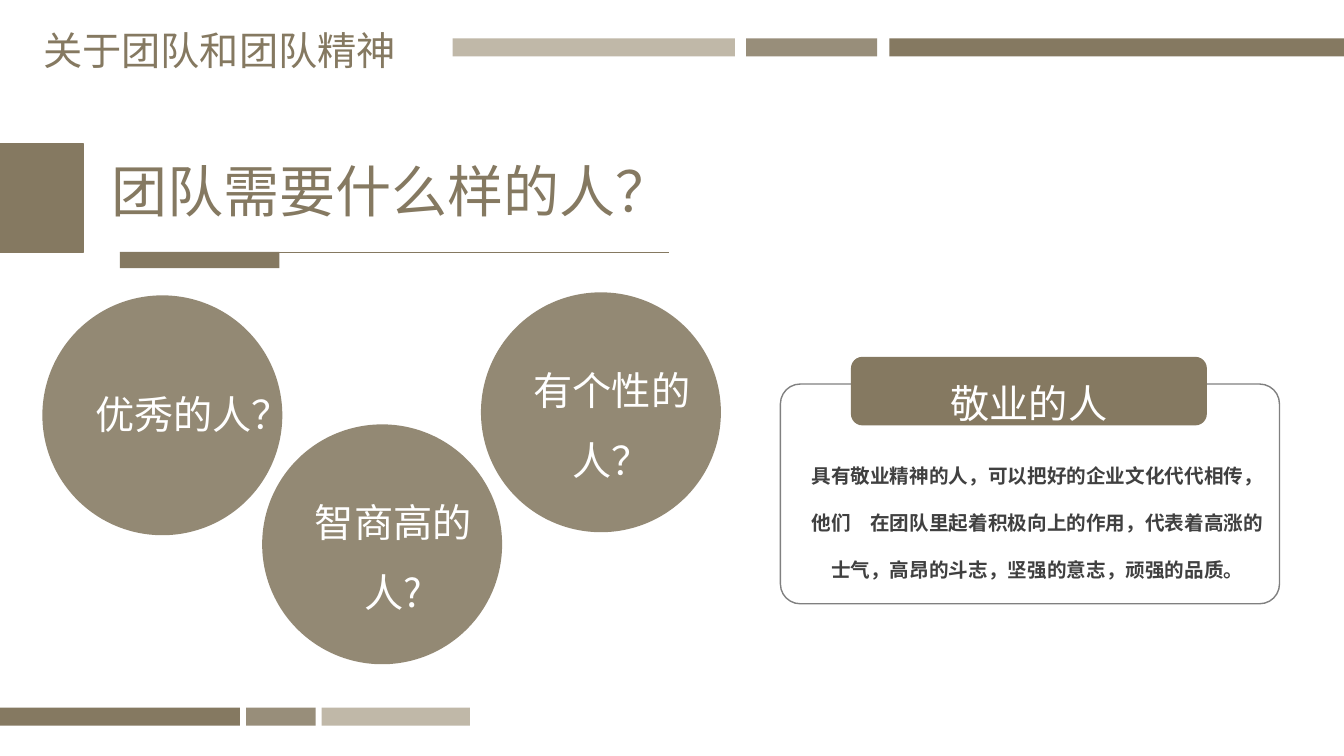
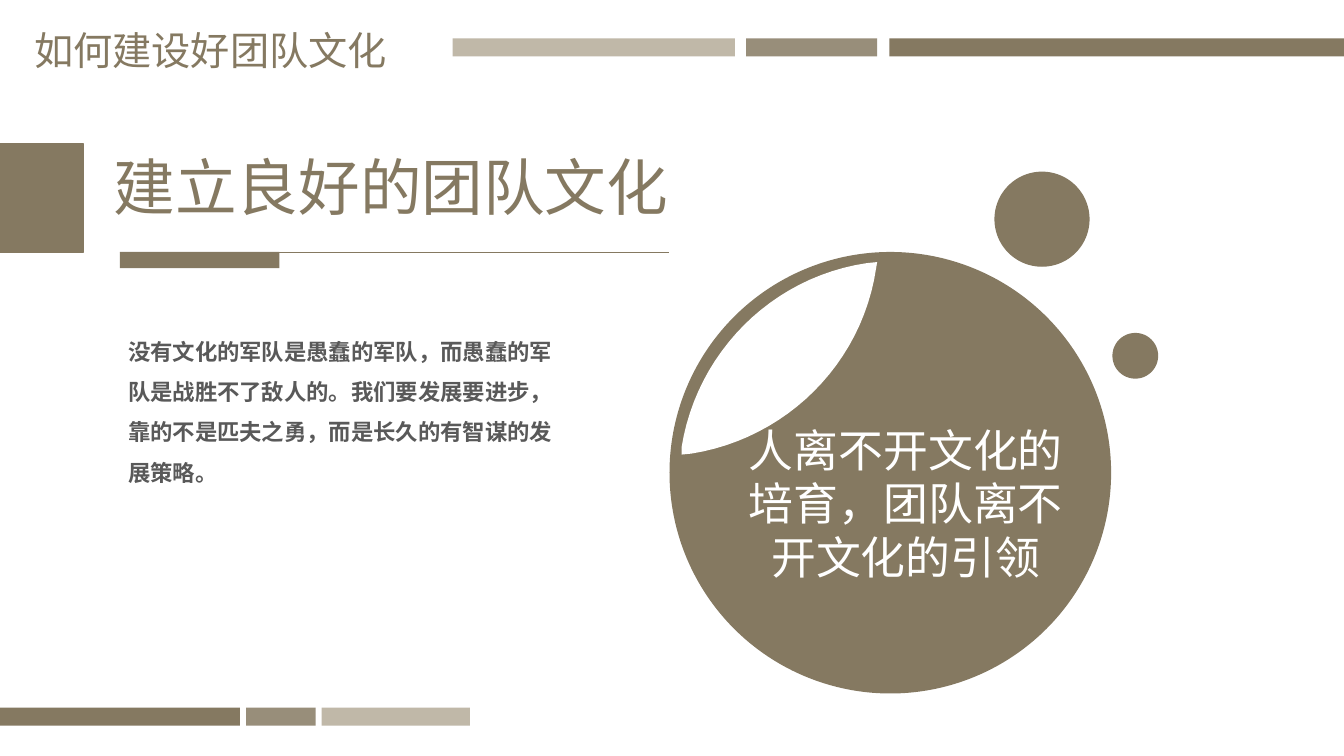
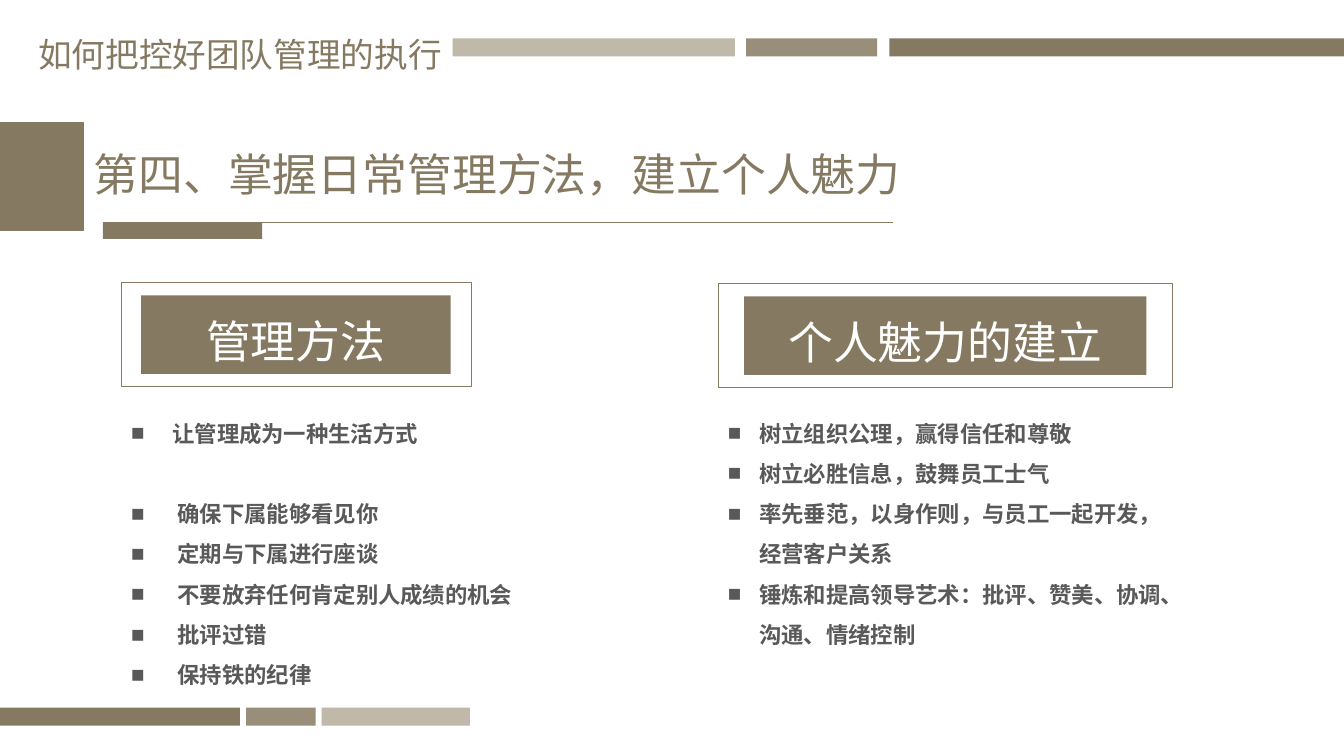
from dataclasses import dataclass

from lxml.etree import SubElement
from pptx import Presentation
from pptx.dml.color import RGBColor
from pptx.enum.shapes import MSO_CONNECTOR, MSO_SHAPE
from pptx.enum.text import MSO_ANCHOR, MSO_AUTO_SIZE, PP_ALIGN
from pptx.oxml.ns import qn
from pptx.util import Inches, Pt


@dataclass(frozen=True)
class Theme:
    """Colours, font and type sizes of the presentation."""

    font: str = "Noto Sans CJK SC"
    brown: str = "857961"
    sand: str = "C0B8A8"
    white: str = "FFFFFF"
    grey: str = "808080"
    dark: str = "404040"
    body: str = "595959"
    title_size: int = 28
    long_title_size: int = 24
    bubble_size: int = 28
    large_size: int = 32
    heading_size: int = 40
    big_heading_size: int = 44
    card_size: int = 14
    body_size: int = 16


THEME = Theme()


def to_lengths(box):
    """Return the numbers of a box as lengths."""
    return [Inches(value) for value in box]


def set_values(target, values):
    """Set each attribute of the target from a dict."""
    for name, value in values.items():
        setattr(target, name, value)


def write_text(frame, texts, size, color, bold=False, align=PP_ALIGN.LEFT,
               spacing=1.0, indents=None, gap_after_first=0, anchor=MSO_ANCHOR.TOP):
    """Write one formatted paragraph per text; indents turn on square bullets."""
    set_values(frame, {"word_wrap": True, "auto_size": MSO_AUTO_SIZE.NONE,
                       "vertical_anchor": anchor})
    for index, text in enumerate(texts):
        paragraph = frame.add_paragraph() if index else frame.paragraphs[0]
        set_values(paragraph, {"alignment": align, "line_spacing": spacing,
                               "space_before": Pt(0),
                               "space_after": Pt(0 if index else gap_after_first)})
        properties = paragraph._p.get_or_add_pPr()
        indent = Inches(indents[index]) if indents else 0
        properties.set("marL", str(indent))
        properties.set("indent", str(-indent))
        if indents:
            SubElement(properties, qn("a:buChar"), char="■")
        else:
            SubElement(properties, qn("a:buNone"))
        run = paragraph.add_run()
        run.text = text
        set_values(run.font, {"name": THEME.font, "size": Pt(size), "bold": bold})
        run.font.color.rgb = RGBColor.from_string(color)
        SubElement(run._r.get_or_add_rPr(), qn("a:ea"), typeface=THEME.font)


def add_text(slide, box, text, size, color, **options):
    """Add a text box with one paragraph."""
    text_box = slide.shapes.add_textbox(*to_lengths(box))
    write_text(text_box.text_frame, [text], size, color, **options)


def fill_placeholder(placeholder, box, texts, size, color, **options):
    """Move a placeholder to the box and write its text."""
    names = ("left", "top", "width", "height")
    set_values(placeholder, dict(zip(names, to_lengths(box))))
    write_text(placeholder.text_frame, texts, size, color, **options)


def paint(shape, fill=None, line=None, line_width=1, opacity=100):
    """Give a shape its fill, opacity and outline, without a shadow."""
    shape.shadow.inherit = False
    if fill:
        shape.fill.solid()
        shape.fill.fore_color.rgb = RGBColor.from_string(fill)
        if opacity < 100:
            color = shape.element.spPr.find(".//" + qn("a:srgbClr"))
            SubElement(color, qn("a:alpha"), val=str(opacity * 1000))
    else:
        shape.fill.background()
    if line:
        shape.line.color.rgb = RGBColor.from_string(line)
        shape.line.width = Pt(line_width)
    else:
        shape.line.fill.background()


def add_preset(slide, kind, box, radius=None, **colors):
    """Add a painted preset shape."""
    shape = slide.shapes.add_shape(kind, *to_lengths(box))
    if radius is not None:
        shape.adjustments[0] = radius
    paint(shape, **colors)
    return shape


def add_bands(slide, master):
    """Draw the top and bottom bands and place them on the master."""
    bands = (
        (8.82, 0.38, 4.52, THEME.brown, 100),
        (7.4, 0.38, 1.3, THEME.brown, 84),
        (4.49, 0.38, 2.8, THEME.sand, 100),
        (0, 7.02, 2.38, THEME.brown, 100),
        (2.44, 7.02, 0.69, THEME.brown, 84),
        (3.19, 7.02, 1.47, THEME.sand, 100),
    )
    for number, (left, top, width, color, opacity) in enumerate(bands, 101):
        band = add_preset(slide, MSO_SHAPE.RECTANGLE, (left, top, width, 0.18),
                          fill=color, opacity=opacity)
        band.element.nvSpPr.cNvPr.set("id", str(number))
        master.shapes.element.append(band.element)


def add_heading(slide, text, size, block_top, text_box, rule):
    """Add the side block, the heading and its rule (left, top, width)."""
    add_preset(slide, MSO_SHAPE.RECTANGLE, (0, block_top, 0.83, 1.07),
               fill=THEME.brown, line=THEME.brown)
    add_text(slide, text_box, text, size, THEME.brown)
    left, top, width = rule
    connector = slide.shapes.add_connector(
        MSO_CONNECTOR.STRAIGHT, *to_lengths((left, top, left + width, top)))
    connector.line.color.rgb = RGBColor.from_string(THEME.brown)
    connector.line.width = Pt(0.5)
    SubElement(connector.element.spPr, qn("a:effectLst"))
    add_preset(slide, MSO_SHAPE.RECTANGLE, (left, top, 1.58, 0.16), fill=THEME.brown)


def add_bubble(slide, left, top, text, text_offset):
    """Add a translucent circle with a question."""
    add_preset(slide, MSO_SHAPE.OVAL, (left, top, 2.38, 2.38),
               fill=THEME.brown, opacity=88)
    add_text(slide, (left + 0.37, top + text_offset, 1.86, 1.43), text,
             THEME.bubble_size, THEME.white, align=PP_ALIGN.CENTER, spacing=1.5)


def add_card(slide, placeholder, box, label, text):
    """Add an outlined card with a label on its upper edge."""
    left, top, width, height = box
    add_preset(slide, MSO_SHAPE.ROUNDED_RECTANGLE, box, radius=0.09, line=THEME.grey)
    tab = add_preset(slide, MSO_SHAPE.ROUNDED_RECTANGLE,
                     (left + 0.7, top - 0.27, 3.53, 0.68), fill=THEME.brown)
    write_text(tab.text_frame, [label], THEME.bubble_size, THEME.white,
               align=PP_ALIGN.CENTER, spacing=1.5, anchor=MSO_ANCHOR.MIDDLE)
    fill_placeholder(placeholder, (left + 0.16, top + 0.51, width - 0.17, height - 0.6),
                     [text], THEME.card_size, THEME.dark, bold=True,
                     align=PP_ALIGN.CENTER, spacing=2.0)


def curve_points(start, first_control, second_control, end, steps=24):
    """Return points along a cubic curve."""
    points = []
    for step in range(steps + 1):
        t = step / steps
        weights = ((1 - t) ** 3, 3 * t * (1 - t) ** 2, 3 * t * t * (1 - t), t ** 3)
        corners = (start, first_control, second_control, end)
        points.append(tuple(sum(weight * corner[axis]
                                for weight, corner in zip(weights, corners))
                            for axis in (0, 1)))
    return points


def add_disc(slide, left, top, text):
    """Add the large disc with its highlight and statement."""
    add_preset(slide, MSO_SHAPE.OVAL, (left, top, 4.38, 4.38), fill=THEME.brown)
    outline = [(2.06, 0.1)]
    outline += curve_points((2.05, 0.16), (1.91, 1.11), (1.16, 1.85), (0.22, 2))
    outline += [(0.12, 2.01)]
    outline += curve_points((0.12, 1.94), (0.27, 1), (1.01, 0.25), (1.96, 0.11))
    points = [to_lengths((left + x, top + y)) for x, y in outline]
    builder = slide.shapes.build_freeform(*points[0])
    builder.add_line_segments(points[1:], close=True)
    paint(builder.convert_to_shape(), fill=THEME.white)
    add_text(slide, (left + 0.59, top + 1.64, 3.51, 1.72), text,
             THEME.large_size, THEME.white, align=PP_ALIGN.CENTER)


def add_column(slide, placeholder, box, margin, label, items, indents, gap=0):
    """Add a framed label and the bulleted list below it."""
    left, top, width, height = box
    add_preset(slide, MSO_SHAPE.RECTANGLE, box, line=THEME.brown, line_width=0.25)
    add_preset(slide, MSO_SHAPE.RECTANGLE,
               (left + margin, top + 0.13, width - 2 * margin, 0.78), fill=THEME.brown)
    add_text(slide, (left, top, width, 0.81), label, THEME.large_size, THEME.white,
             align=PP_ALIGN.CENTER, spacing=1.5)
    fill_placeholder(placeholder, (left, 3.98, 4.69, 2.92), items, THEME.body_size,
                     THEME.body, bold=True, spacing=1.5, indents=indents,
                     gap_after_first=gap)


def build_people_slide(slide):
    """Build the slide on the people a team needs."""
    fill_placeholder(slide.shapes.title, (0.33, 0.21, 4.33, 0.57),
                     ["关于团队和团队精神"], THEME.title_size, THEME.brown)
    add_heading(slide, "团队需要什么样的人？", THEME.heading_size, 1.43,
                (1.01, 1.5, 5.98, 0.77), (1.19, 2.5, 5.45))
    bubbles = (
        (0.42, 2.93, "优秀的人？", 0.66),
        (2.6, 4.21, "智商高的人?", 0.45),
        (4.77, 2.9, "有个性的人？", 0.45),
    )
    for bubble in bubbles:
        add_bubble(slide, *bubble)
    add_card(slide, slide.placeholders[1], (7.74, 3.81, 4.95, 2.18), "敬业的人",
             "具有敬业精神的人，可以把好的企业文化代代相传，他们　在团队里起着积极向上的作用，"
             "代表着高涨的士气，高昂的斗志，坚强的意志，顽强的品质。")


def build_culture_slide(slide):
    """Build the slide on team culture."""
    fill_placeholder(slide.shapes.title, (0.24, 0.21, 4, 0.57),
                     ["如何建设好团队文化"], THEME.title_size, THEME.brown)
    add_heading(slide, "建立良好的团队文化", THEME.big_heading_size, 1.43,
                (1.03, 1.43, 5.77, 0.84), (1.19, 2.5, 5.45))
    fill_placeholder(slide.placeholders[1], (1.17, 3.17, 4.6, 1.72),
                     ["没有文化的军队是愚蠢的军队，而愚蠢的军队是战胜不了敌人的。"
                      "我们要发展要进步，靠的不是匹夫之勇，而是长久的有智谋的发展策略。"],
                     THEME.body_size, THEME.body, bold=True, spacing=1.5)
    add_disc(slide, 6.64, 2.5, "人离不开文化的培育，团队离不开文化的引领")
    for left, top, diameter in ((9.87, 1.71, 0.93), (11.04, 3.31, 0.44)):
        add_preset(slide, MSO_SHAPE.OVAL, (left, top, diameter, diameter),
                   fill=THEME.brown, line=THEME.brown)


def build_methods_slide(slide):
    """Build the slide on management methods and personal charm."""
    fill_placeholder(slide.shapes.title, (0.28, 0.29, 4.69, 0.5),
                     ["如何把控好团队管理的执行"], THEME.long_title_size, THEME.brown)
    add_heading(slide, "第四、掌握日常管理方法，建立个人魅力", THEME.large_size, 1.22,
                (0.83, 1.41, 9.48, 0.64), (1.02, 2.21, 7.84))
    methods = ["让管理成为一种生活方式", "确保下属能够看见你", "定期与下属进行座谈",
               "不要放弃任何肯定别人成绩的机会", "批评过错", "保持铁的纪律"]
    charms = ["树立组织公理，赢得信任和尊敬", "树立必胜信息，鼓舞员工士气",
              "率先垂范，以身作则，与员工一起开发，经营客户关系",
              "锤炼和提高领导艺术：批评、赞美、协调、沟通、情绪控制"]
    add_column(slide, slide.placeholders[1], (1.2, 2.8, 3.47, 1.03), 0.2,
               "管理方法", methods, [0.41] + [0.46] * 5, gap=28.8)
    add_column(slide, slide.placeholders[2], (7.12, 2.81, 4.51, 1.03), 0.26,
               "个人魅力的建立", charms, [0.31] * 4)


def main():
    """Build and save the presentation."""
    presentation = Presentation()
    set_values(presentation, {"slide_width": Inches(13.33), "slide_height": Inches(7.5)})
    layouts = presentation.slide_layouts
    pages = ((build_people_slide, layouts[1]), (build_culture_slide, layouts[1]),
             (build_methods_slide, layouts[3]))
    for index, (build, layout) in enumerate(pages):
        slide = presentation.slides.add_slide(layout)
        if index == 0:
            add_bands(slide, presentation.slide_master)
        build(slide)
    presentation.save("out.pptx")


if __name__ == "__main__":
    main()
